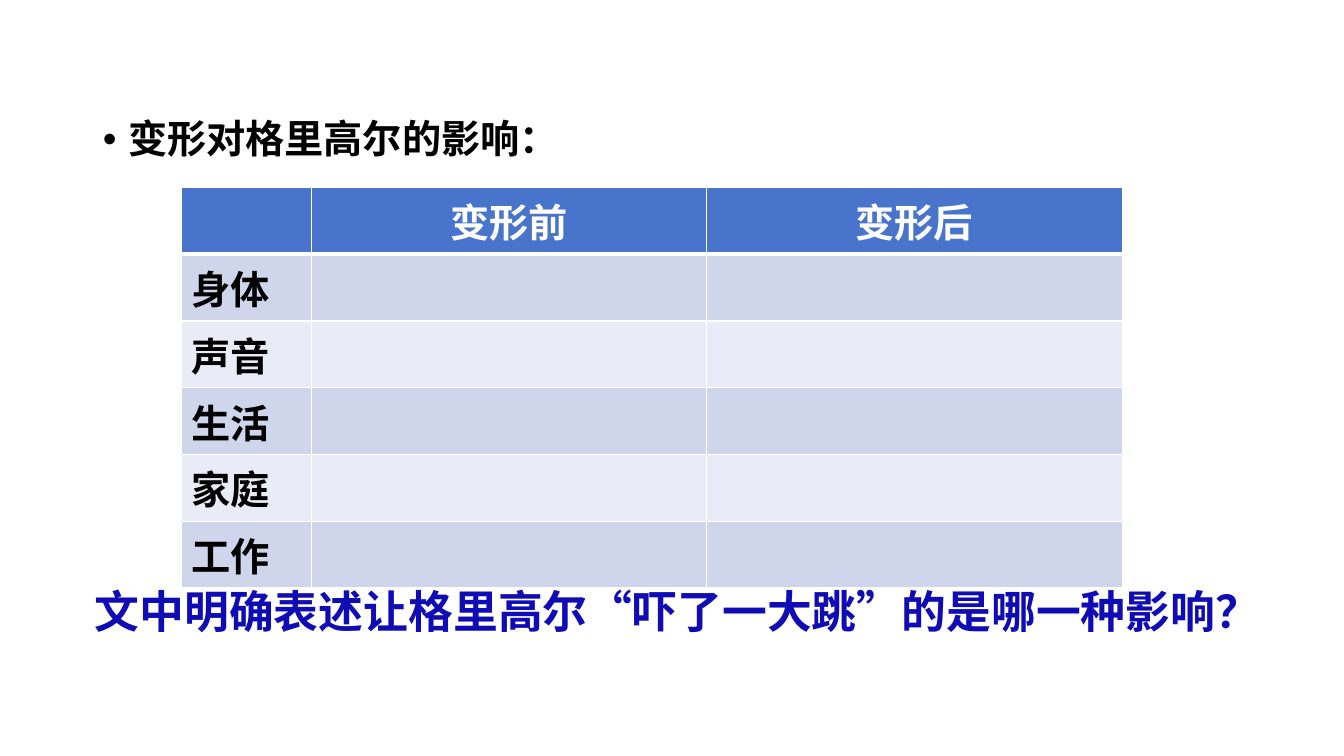
from lxml.etree import SubElement
from pptx import Presentation
from pptx.dml.color import RGBColor
from pptx.enum.text import MSO_AUTO_SIZE as AutoSize, PP_ALIGN as Align
from pptx.oxml.ns import qn
from pptx.util import Inches, Pt

COLORS = {"ink": "000000", "white": "FFFFFF", "header": "4874CB",
          "band_dark": "CFD6EC", "band_light": "E9EBF6", "question": "0F0BB5"}
ASPECTS = ["身体", "声音", "生活", "家庭", "工作"]
ROWS = [["", "变形前", "变形后"]] + [[aspect, "", ""] for aspect in ASPECTS]
COLUMN_WIDTHS = [1.29, 3.92, 4.12]
ROW_HEIGHTS = [0.65] + [0.66] * len(ASPECTS)


class SlideBuilder:
    """Hold the lesson style and add elements to the current slide."""

    font = "Noto Sans CJK SC"

    def __init__(self, slide):
        self.slide = slide

    def style(self, paragraph, size, color):
        for run in paragraph.runs:
            run.font.size, run.font.bold, run.font.name = Pt(size), True, self.font
            run.font.color.rgb = RGBColor.from_string(COLORS[color])
            latin = run._r.get_or_add_rPr().find(qn("a:latin"))
            east_asian = SubElement(latin.getparent(), qn("a:ea"), typeface=self.font)
            latin.addnext(east_asian)

    def bullet(self, text, left, top, width, height):
        body = self.slide.placeholders[1]
        body.left, body.top = Inches(left), Inches(top)
        body.width, body.height = Inches(width), Inches(height)
        body.text_frame.text = text
        paragraph = body.text_frame.paragraphs[0]
        paragraph.line_spacing, paragraph.space_before = 0.9, Pt(10)
        properties = paragraph._p.get_or_add_pPr()
        properties.set("marL", str(Inches(0.25)))
        properties.set("indent", str(Inches(-0.25)))
        SubElement(properties, qn("a:buFont"), typeface="Arial")
        SubElement(properties, qn("a:buChar"), char="•")
        self.style(paragraph, 28, "ink")

    def borders(self, cell, bottom):
        properties = cell._tc.get_or_add_tcPr()
        widths = {"lnL": 1, "lnR": 1, "lnT": 1, "lnB": bottom}
        for position, (side, width) in enumerate(widths.items()):
            line = SubElement(properties, qn(f"a:{side}"), w=str(Pt(width)))
            SubElement(SubElement(line, qn("a:solidFill")), qn("a:srgbClr"), val=COLORS["white"])
            properties.insert(position, line)

    def table(self, rows, left, top, widths, heights):
        table = self.slide.shapes.add_table(
            len(rows), len(widths), Inches(left), Inches(top),
            Inches(sum(widths)), Inches(sum(heights))).table
        for column, width in zip(table.columns, widths):
            column.width = Inches(width)
        for index, (row, texts, height) in enumerate(zip(table.rows, rows, heights)):
            row.height = Inches(height)
            is_header = index == 0
            band = "header" if is_header else "band_dark" if index % 2 else "band_light"
            for cell, text in zip(row.cells, texts):
                cell.fill.solid()
                cell.fill.fore_color.rgb = RGBColor.from_string(COLORS[band])
                self.borders(cell, 3 if is_header else 1)
                cell.text_frame.text = text
                paragraph = cell.text_frame.paragraphs[0]
                paragraph.alignment = Align.CENTER if is_header else Align.LEFT
                self.style(paragraph, 28, "white" if is_header else "ink")

    def question(self, text, left, top, width, height):
        frame = self.slide.shapes.add_textbox(
            Inches(left), Inches(top), Inches(width), Inches(height)).text_frame
        frame.word_wrap, frame.auto_size = True, AutoSize.SHAPE_TO_FIT_TEXT
        frame.text = text
        self.style(frame.paragraphs[0], 32, "question")


def main():
    deck = Presentation()
    deck.slide_width, deck.slide_height = Inches(13.33), Inches(7.5)
    slide = deck.slides.add_slide(deck.slide_layouts[1])
    title = slide.shapes.title.element
    title.getparent().remove(title)
    builder = SlideBuilder(slide)
    builder.bullet("变形对格里高尔的影响：", 0.92, 1.14, 11.5, 4.76)
    builder.table(ROWS, 1.8, 1.86, COLUMN_WIDTHS, ROW_HEIGHTS)
    builder.question("文中明确表述让格里高尔“吓了一大跳”的是哪一种影响？", 0.84, 5.74, 11.58, 0.64)
    deck.save("out.pptx")


if __name__ == "__main__":
    main()
